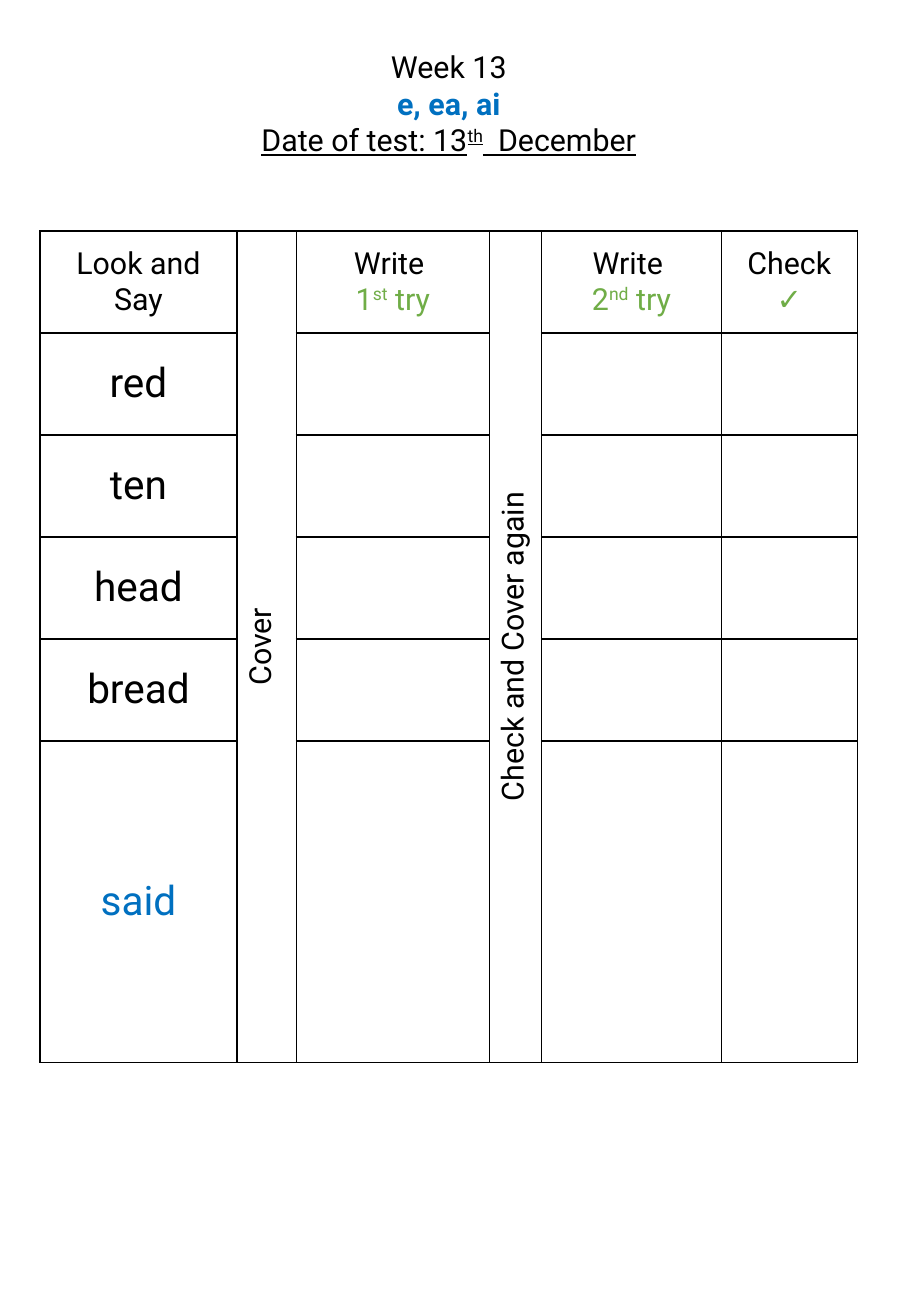
from dataclasses import dataclass

from lxml.etree import SubElement
from pptx import Presentation
from pptx.dml.color import RGBColor
from pptx.enum.text import MSO_ANCHOR as Anchor, MSO_AUTO_SIZE as AutoSize, PP_ALIGN as Align
from pptx.oxml.ns import qn
from pptx.util import Inches, Pt

COLOURS = {"text": "000000", "sound": "0070C0", "attempt": "70AD47", "paper": "FFFFFF"}
FONT = "Roboto"
LEFT, WIDTH = 0.33, 6.73
COLUMN_WIDTHS = [1.62, 0.49, 1.59, 0.43, 1.48, 1.12]
ROW_HEIGHT = 0.84


@dataclass
class TextRun:
    text: str
    colour: str = "text"
    size: int = 18
    bold: bool = False
    underline: bool = False
    superscript: bool = False


Lines = list[list[TextRun]]


@dataclass
class Heading:
    lines: Lines
    sideways: bool = False


def attempt_heading(number: str, ordinal: str) -> Heading:
    return Heading([
        [TextRun("Write ")],
        [TextRun(number, "attempt"), TextRun(ordinal, "attempt", superscript=True),
         TextRun(" try", "attempt")],
    ])


TITLE: Lines = [
    [TextRun("Week 13")],
    [TextRun("e, ea, ai", "sound", bold=True)],
    [TextRun("Date of test: 13", underline=True),
     TextRun("th", underline=True, superscript=True),
     TextRun("  December", underline=True)],
]
HEADINGS = [
    Heading([[TextRun("Look and Say")]]),
    Heading([[TextRun("Cover")]], sideways=True),
    attempt_heading("1", "st"),
    Heading([[TextRun("Check and Cover again")]], sideways=True),
    attempt_heading("2", "nd"),
    Heading([[TextRun("Check")], [TextRun("✓", "attempt")]]),
]
WORDS = [TextRun(word, size=24) for word in ("red", "ten", "head", "bread")]
WORDS.append(TextRun("said", "sound", size=24))


def write_lines(text_frame, lines: Lines) -> None:
    for index, line in enumerate(lines):
        paragraph = text_frame.paragraphs[0] if index == 0 else text_frame.add_paragraph()
        paragraph.alignment = Align.CENTER
        paragraph.line_spacing = 1.0
        paragraph.space_before = Pt(0)
        for item in line:
            run = paragraph.add_run()
            run.text = item.text
            font = run.font
            font.name, font.size = FONT, Pt(item.size)
            font.bold, font.underline = item.bold, item.underline
            font.color.rgb = RGBColor.from_string(COLOURS[item.colour])
            if item.superscript:
                run._r.get_or_add_rPr().set("baseline", "30000")


def format_cell(cell) -> None:
    cell.vertical_anchor = Anchor.MIDDLE
    properties = cell._tc.get_or_add_tcPr()
    for side in ("a:lnL", "a:lnR", "a:lnT", "a:lnB"):
        border = SubElement(properties, qn(side), w=str(Pt(1)))
        line_fill = SubElement(border, qn("a:solidFill"))
        SubElement(line_fill, qn("a:srgbClr"), val=COLOURS["text"])
    cell.fill.solid()
    cell.fill.fore_color.rgb = RGBColor.from_string(COLOURS["paper"])


def add_title(slide) -> None:
    title = slide.shapes.title
    title.left, title.top = Inches(LEFT), Inches(0.35)
    title.width, title.height = Inches(WIDTH), Inches(1.01)
    text_frame = title.text_frame
    text_frame.word_wrap = True
    text_frame.auto_size = AutoSize.SHAPE_TO_FIT_TEXT
    text_frame.vertical_anchor = Anchor.TOP
    write_lines(text_frame, TITLE)


def add_spelling_table(slide) -> None:
    row_count = len(WORDS) + 1
    table = slide.shapes.add_table(
        row_count, len(HEADINGS), Inches(LEFT), Inches(1.9),
        Inches(WIDTH), Inches(ROW_HEIGHT * row_count)).table
    table.first_row = table.horz_banding = False
    for column, width in zip(table.columns, COLUMN_WIDTHS):
        column.width = Inches(width)
    for row in table.rows:
        row.height = Inches(ROW_HEIGHT)
    for cell in table.iter_cells():
        format_cell(cell)

    # Headings, with the sideways ones running down the whole table
    for column_index, heading in enumerate(HEADINGS):
        cell = table.cell(0, column_index)
        if heading.sideways:
            cell.merge(table.cell(row_count - 1, column_index))
            cell._tc.get_or_add_tcPr().set("vert", "vert270")
        write_lines(cell.text_frame, heading.lines)

    # Words to learn
    for row_index, word in enumerate(WORDS, start=1):
        write_lines(table.cell(row_index, 0).text_frame, [[word]])


def main() -> None:
    presentation = Presentation()
    presentation.slide_width, presentation.slide_height = Inches(7.5), Inches(10.83)
    slide = presentation.slides.add_slide(presentation.slide_layouts[5])
    add_title(slide)
    add_spelling_table(slide)
    presentation.save("out.pptx")


if __name__ == "__main__":
    main()
